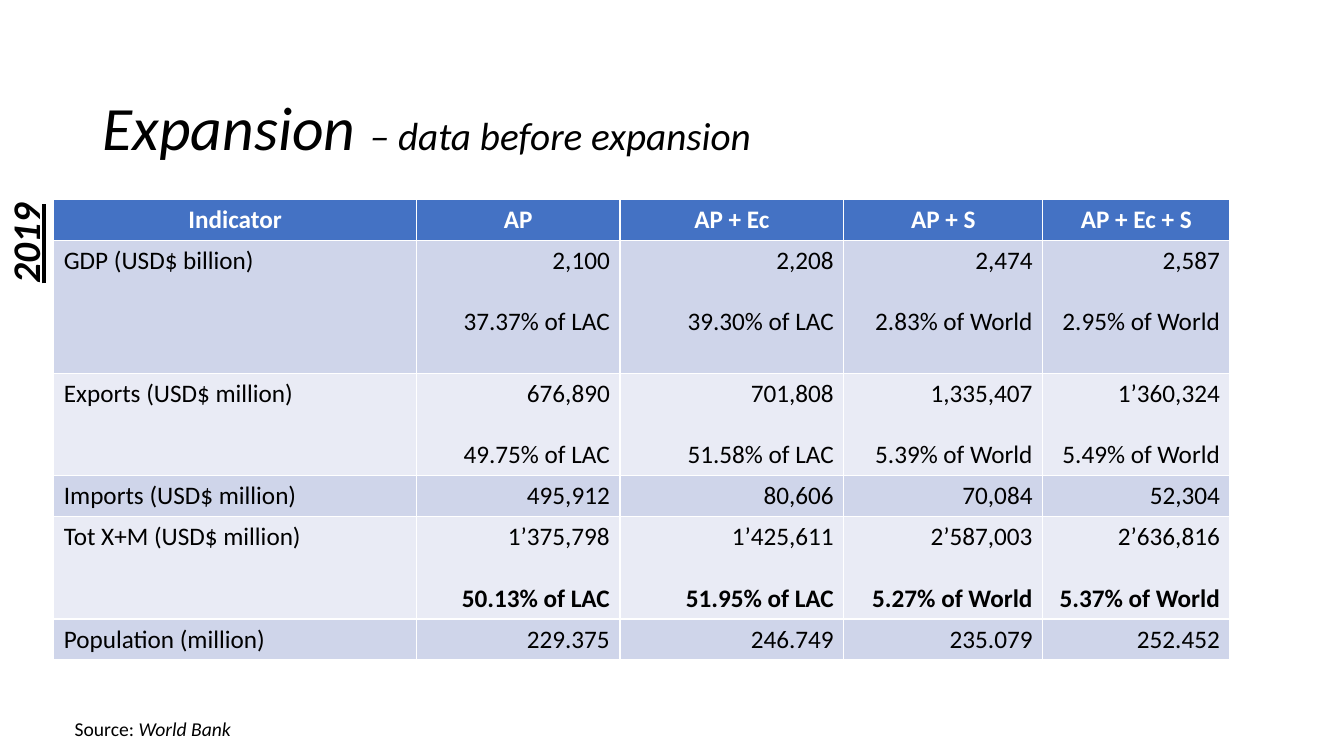
"""Build the slide comparing trade data before expansion."""
from pptx import Presentation
from pptx.dml.color import RGBColor
from pptx.enum.text import MSO_ANCHOR, PP_ALIGN
from pptx.util import Pt

TITLE = [("Expansion ", 44), ("– data before expansion", 28)]
HEADER = ["Indicator", "AP", "AP + Ec", "AP + S", "AP + Ec + S"]
ROWS = [
    ["GDP (USD$ billion)", ("2,100", "37.37% of LAC"), ("2,208", "39.30% of LAC"),
     ("2,474", "2.83% of World"), ("2,587", "2.95% of World")],
    ["Exports (USD$ million)", ("676,890", "49.75% of LAC"), ("701,808", "51.58% of LAC"),
     ("1,335,407", "5.39% of World"), ("1’360,324", "5.49% of World")],
    ["Imports (USD$ million)", ("495,912",), ("80,606",), ("70,084",), ("52,304",)],
    ["Tot X+M (USD$ million)", ("1’375,798", "50.13% of LAC"), ("1’425,611", "51.95% of LAC"),
     ("2’587,003", "5.27% of World"), ("2’636,816", "5.37% of World")],
    ["Population (million)", ("229.375",), ("246.749",), ("235.079",), ("252.452",)],
]
BOLD_SHARE_ROW = 4
COL_WIDTHS = [259.2, 145.2, 160, 142, 133.8]
ROW_HEIGHTS = [29.2, 95, 73.2, 29.2, 73.2, 29.2]
LINE = 22
FONT = "Calibri"
COLORS = {"text": "000000", "header_text": "FFFFFF", "header": "4472C4",
          "odd": "CFD5EA", "even": "E9EBF5"}


def color(name):
    return RGBColor.from_string(COLORS[name])


def style(r, size, name="text", bold=False, italic=False, underline=False):
    f = r.font
    f.name, f.size = FONT, Pt(size)
    f.bold, f.italic, f.underline = bold, italic, underline
    f.color.rgb = color(name)


def add_run(p, text, size, **look):
    r = p.add_run()
    r.text = text
    style(r, size, **look)


def add_box(s, left, top, width, height):
    sp = s.shapes.add_textbox(Pt(left), Pt(top), Pt(width), Pt(height))
    sp.text_frame.word_wrap = True
    return sp


def fill_cell(cell, lines, fill, align, name="text", bold=False, bold_share=False):
    cell.fill.solid()
    cell.fill.fore_color.rgb = color(fill)
    cell.text_frame.text = "\n".join(lines)
    for i, p in enumerate(cell.text_frame.paragraphs):
        p.alignment = align
        if i:
            p.space_before = Pt(LINE)
        style(p.runs[0], 18, name, bold or (bold_share and i > 0))


def add_data_table(s):
    table = s.shapes.add_table(len(ROWS) + 1, len(HEADER), Pt(38.4), Pt(142.4),
                               Pt(sum(COL_WIDTHS)), Pt(sum(ROW_HEIGHTS))).table
    for col, width in zip(table.columns, COL_WIDTHS):
        col.width = Pt(width)
    for row, height in zip(table.rows, ROW_HEIGHTS):
        row.height = Pt(height)
    for c, text in enumerate(HEADER):
        fill_cell(table.cell(0, c), [text], "header", PP_ALIGN.CENTER, "header_text", True)
    for r, (label, *values) in enumerate(ROWS, 1):
        band = "odd" if r % 2 else "even"
        fill_cell(table.cell(r, 0), [label], band, PP_ALIGN.LEFT)
        for c, lines in enumerate(values, 1):
            fill_cell(table.cell(r, c), lines, band, PP_ALIGN.RIGHT,
                      bold_share=r == BOLD_SHARE_ROW)


def main():
    prs = Presentation()
    prs.slide_width, prs.slide_height = Pt(960), Pt(540)
    s = prs.slides.add_slide(prs.slide_layouts[5])

    title = s.shapes.title
    title.left, title.top, title.width, title.height = Pt(66), Pt(52.5), Pt(828), Pt(81)
    title.text_frame.vertical_anchor = MSO_ANCHOR.MIDDLE
    p = title.text_frame.paragraphs[0]
    p.alignment, p.line_spacing = PP_ALIGN.LEFT, 0.9
    for text, size in TITLE:
        add_run(p, text, size, italic=True)

    add_data_table(s)

    source = add_box(s, 46.2, 508.4, 235.4, 24.2)
    p = source.text_frame.paragraphs[0]
    add_run(p, "Source: ", 14)
    add_run(p, "World Bank", 14, italic=True)

    year = add_box(s, -43.8, 127.4, 123, 41.2)
    year.rotation = 270
    add_run(year.text_frame.paragraphs[0], "2019", 28, bold=True, italic=True, underline=True)

    prs.save("out.pptx")


if __name__ == "__main__":
    main()
